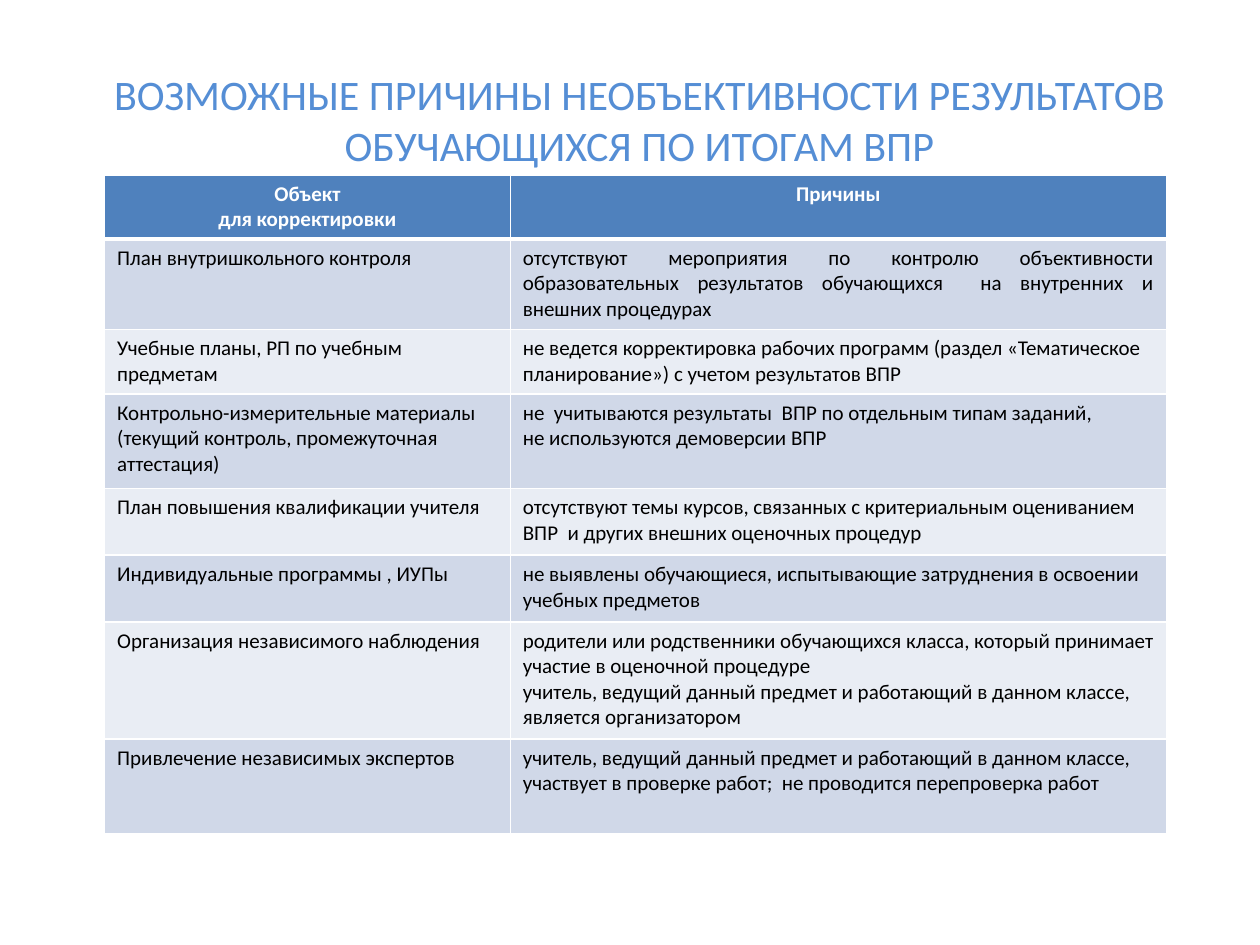
from dataclasses import dataclass

from lxml import etree
from pptx import Presentation
from pptx.dml.color import RGBColor
from pptx.enum import text as t
from pptx.oxml import ns
from pptx.util import Pt


@dataclass(frozen=True)
class Theme:
    font: str = "Calibri"
    title_size: float = 24
    table_size: float = 12
    title: str = "558ED5"
    header: str = "4F81BD"
    bands: tuple = ("D0D8E8", "E9EDF4")
    ink: str = "000000"
    white: str = "FFFFFF"


@dataclass(frozen=True)
class Row:
    height: float
    subject: str
    reasons: str
    reasons_align: t.PP_ALIGN = t.PP_ALIGN.LEFT


THEME = Theme()
COLUMN_WIDTHS = (231.84, 375.12)
TITLE = "ВОЗМОЖНЫЕ ПРИЧИНЫ НЕОБЪЕКТИВНОСТИ РЕЗУЛЬТАТОВ ОБУЧАЮЩИХСЯ ПО ИТОГАМ ВПР"
HEADER = Row(33.84, "Объект\nдля корректировки", "Причины", t.PP_ALIGN.CENTER)
# A newline starts a paragraph, \v breaks the line inside one
ROWS = (
    Row(51.84, "План внутришкольного контроля",
        "отсутствуют мероприятия по контролю объективности образовательных "
        "результатов обучающихся  на внутренних и внешних процедурах",
        t.PP_ALIGN.JUSTIFY),
    Row(36.72, "Учебные планы, РП по учебным предметам",
        "не ведется корректировка рабочих программ (раздел «Тематическое "
        "планирование») с учетом результатов ВПР"),
    Row(54, "Контрольно-измерительные материалы (текущий контроль, "
        "промежуточная аттестация)",
        "не  учитываются результаты  ВПР по отдельным типам заданий,"
        "\vне используются демоверсии ВПР"),
    Row(38.16, "План повышения квалификации учителя",
        "отсутствуют темы курсов, связанных с критериальным оцениванием "
        "ВПР  и других внешних оценочных процедур"),
    Row(38.16, "Индивидуальные программы , ИУПы",
        "не выявлены обучающиеся, испытывающие затруднения в освоении "
        "учебных предметов"),
    Row(66.96, "Организация независимого наблюдения",
        "родители или родственники обучающихся класса, который принимает "
        "участие в оценочной процедуре\n"
        "учитель, ведущий данный предмет и работающий в данном классе, "
        "является организатором"),
    Row(54, "Привлечение независимых экспертов",
        "учитель, ведущий данный предмет и работающий в данном классе, "
        "участвует в проверке работ;  не проводится перепроверка работ"),
)


def write(frame, content: str, *, size: float, color: str, bold: bool = False,
          align: t.PP_ALIGN = t.PP_ALIGN.LEFT) -> None:
    frame.word_wrap = True
    for number, line in enumerate(content.split("\n")):
        paragraph = frame.add_paragraph() if number else frame.paragraphs[0]
        paragraph.text = line
        paragraph.alignment = align
        for run in paragraph.runs:
            run.font.name = THEME.font
            run.font.size = Pt(size)
            run.font.bold = bold
            run.font.color.rgb = RGBColor.from_string(color)


def set_borders(cell, bottom: float = 1) -> None:
    properties = cell._tc.get_or_add_tcPr()
    widths = {"lnL": 1, "lnR": 1, "lnT": 1, "lnB": bottom}
    for position, (side, width) in enumerate(widths.items()):
        line = etree.Element(ns.qn(f"a:{side}"), w=str(Pt(width)))
        fill = etree.SubElement(line, ns.qn("a:solidFill"))
        etree.SubElement(fill, ns.qn("a:srgbClr"), val=THEME.white)
        properties.insert(position, line)


def fill_row(table, index: int, row: Row) -> None:
    is_header = index == 0
    fill = THEME.header if is_header else THEME.bands[(index - 1) % 2]
    subject_align = t.PP_ALIGN.CENTER if is_header else t.PP_ALIGN.LEFT
    table.rows[index].height = Pt(row.height)
    contents = ((row.subject, subject_align), (row.reasons, row.reasons_align))
    for column, (content, align) in enumerate(contents):
        cell = table.cell(index, column)
        cell.fill.solid()
        cell.fill.fore_color.rgb = RGBColor.from_string(fill)
        # The header rule is heavier, and the first body row shares it
        set_borders(cell, bottom=3 if is_header else 1)
        write(cell.text_frame, content, size=THEME.table_size, align=align,
              color=THEME.white if is_header else THEME.ink, bold=is_header)


def main() -> None:
    deck = Presentation()
    deck.slide_width, deck.slide_height = Pt(720), Pt(540)
    slide = deck.slides.add_slide(deck.slide_layouts[5])

    # Title, raised above the table by its bottom inset
    heading = slide.shapes.title
    heading.left, heading.top = Pt(30.96), Pt(25.92)
    heading.width, heading.height = Pt(668.88), Pt(113.04)
    frame = heading.text_frame
    frame.auto_size = t.MSO_AUTO_SIZE.NONE
    frame.vertical_anchor = t.MSO_ANCHOR.MIDDLE
    frame.margin_bottom = Pt(32.4)
    write(frame, TITLE, size=THEME.title_size, color=THEME.title,
          align=t.PP_ALIGN.CENTER)

    # Table of subjects and reasons
    rows = (HEADER, *ROWS)
    causes = slide.shapes.add_table(
        len(rows), len(COLUMN_WIDTHS), Pt(59.76), Pt(100.08),
        Pt(sum(COLUMN_WIDTHS)), Pt(sum(row.height for row in rows))).table
    causes.horz_banding = False
    for column, width in zip(causes.columns, COLUMN_WIDTHS):
        column.width = Pt(width)
    for index, row in enumerate(rows):
        fill_row(causes, index, row)

    deck.save("out.pptx")


if __name__ == "__main__":
    main()
